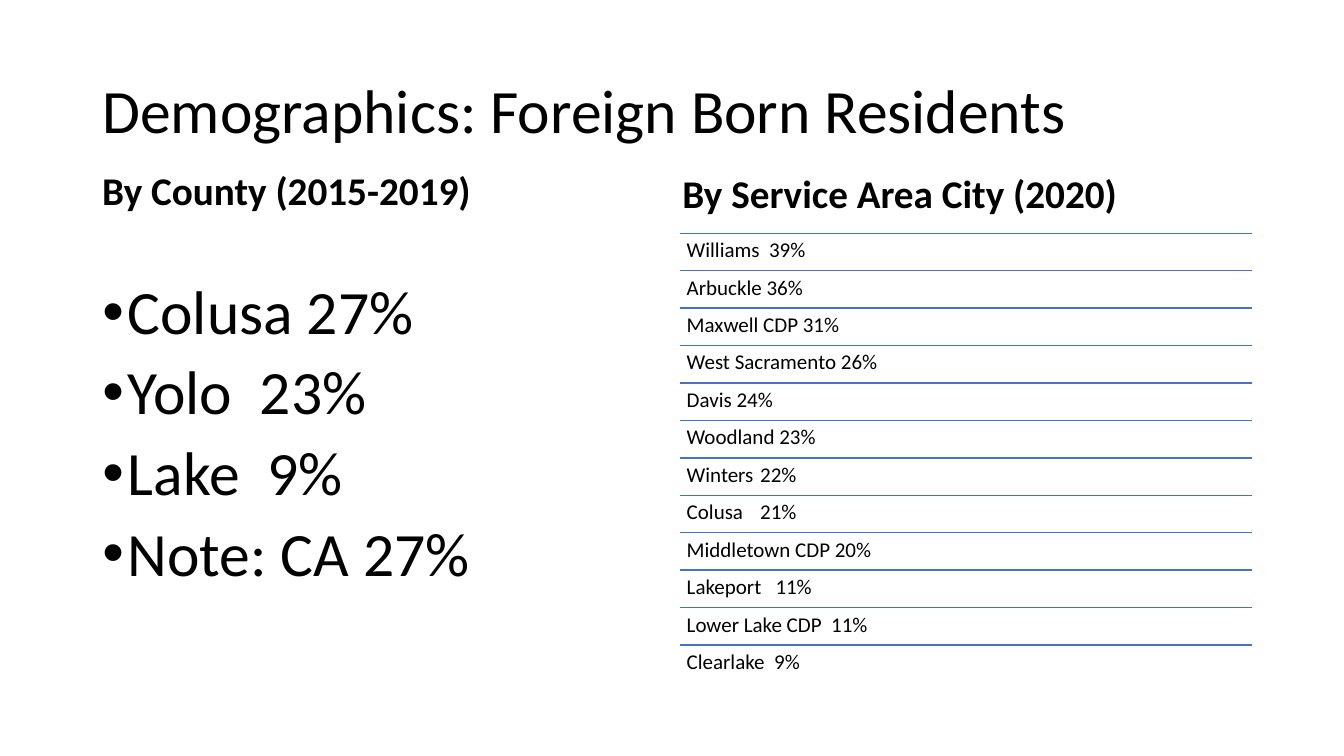
import dataclasses

import lxml.etree
import pptx
import pptx.dml.color
import pptx.enum.shapes
import pptx.enum.text
import pptx.oxml.ns
import pptx.util

Pt = pptx.util.Pt
Anchor = pptx.enum.text.MSO_ANCHOR

COUNTIES = ["Colusa 27%", "Yolo  23%", "Lake  9%", "Note: CA 27%"]
CITIES = [
    "Williams  39%", "Arbuckle 36%", "Maxwell CDP 31%", "West Sacramento 26%",
    "Davis 24%", "Woodland 23%", "Winters\t22%", "Colusa\t21%",
    "Middletown CDP 20%", "Lakeport   11%", "Lower Lake CDP  11%", "Clearlake  9%",
]


@dataclasses.dataclass
class Theme:
    font: str = "Calibri"
    text: str = "000000"
    rule: str = "4472C4"
    background: str = "FFFFFF"
    large: float = 44
    heading: float = 28
    row: float = 15


def color(value):
    return pptx.dml.color.RGBColor.from_string(value)


def add_element(parent, tag, **attributes):
    element = lxml.etree.SubElement(parent, pptx.oxml.ns.qn(tag))
    for name, value in attributes.items():
        element.set(name, str(value))


class SlideBuilder:
    def __init__(self, slide, theme):
        self.slide = slide
        self.theme = theme
        slide.background.fill.solid()
        slide.background.fill.fore_color.rgb = color(theme.background)

    def fill_paragraph(self, paragraph, text, size, bold=False, before=0):
        paragraph.alignment = pptx.enum.text.PP_ALIGN.LEFT
        paragraph.line_spacing = 0.9
        paragraph.space_before = Pt(before)
        run = paragraph.add_run()
        run.text = text
        run.font.name = self.theme.font
        run.font.size = Pt(size)
        run.font.bold = bold
        run.font.color.rgb = color(self.theme.text)

    def placeholder(self, index, box, anchor):
        shape = self.slide.placeholders[index]
        shape.left, shape.top, shape.width, shape.height = map(Pt, box)
        frame = shape.text_frame
        frame.word_wrap = True
        frame.auto_size = pptx.enum.text.MSO_AUTO_SIZE.NONE
        frame.vertical_anchor = anchor
        return frame

    def title(self, text, box):
        frame = self.placeholder(0, box, Anchor.MIDDLE)
        self.fill_paragraph(frame.paragraphs[0], text, self.theme.large)

    def heading(self, index, text, box):
        frame = self.placeholder(index, box, Anchor.BOTTOM)
        self.fill_paragraph(
            frame.paragraphs[0], text, self.theme.heading, bold=True, before=10)

    def bullets(self, index, items, box):
        frame = self.placeholder(index, box, Anchor.TOP)
        for number, item in enumerate(items):
            paragraph = frame.add_paragraph() if number else frame.paragraphs[0]
            self.fill_paragraph(paragraph, item, self.theme.large, before=10)
            properties = paragraph._p.get_or_add_pPr()
            properties.set("marL", str(Pt(18)))
            properties.set("indent", str(Pt(-18)))
            add_element(properties, "a:buFont", typeface="Arial")
            add_element(properties, "a:buChar", char="•")

    def rule(self, shapes, left, top, width):
        line = shapes.add_connector(
            pptx.enum.shapes.MSO_CONNECTOR.STRAIGHT,
            Pt(left), Pt(top), Pt(left + width), Pt(top))
        line.line.color.rgb = color(self.theme.rule)
        line.line.width = Pt(1)
        add_element(line._element.spPr, "a:effectLst")

    def row_text(self, shapes, text, box):
        frame = shapes.add_textbox(*map(Pt, box)).text_frame
        frame.word_wrap = True
        frame.margin_left = frame.margin_right = Pt(4.5)
        frame.margin_top = frame.margin_bottom = Pt(4.5)
        paragraph = frame.paragraphs[0]
        self.fill_paragraph(paragraph, text, self.theme.row)
        paragraph._p.get_or_add_pPr().set("defTabSz", str(Pt(52.5)))

    def ruled_list(self, items, left, top, width, pitch):
        shapes = self.slide.shapes.add_group_shape().shapes
        for number, item in enumerate(items):
            row_top = top + number * pitch
            self.rule(shapes, left, row_top, width)
            self.row_text(shapes, item, (left, row_top, width, pitch))


def main():
    presentation = pptx.Presentation()
    presentation.slide_width = Pt(960)
    presentation.slide_height = Pt(540)
    comparison = presentation.slide_layouts.get_by_name("Comparison")
    slide = presentation.slides.add_slide(comparison)
    builder = SlideBuilder(slide, Theme())

    # Title
    builder.title("Demographics: Foreign Born Residents", (66, 28.8, 828, 104.4))

    # Counties
    builder.heading(1, "By County (2015-2019)", (65.8, 116, 406, 40.3))
    builder.bullets(2, COUNTIES, (66, 197.3, 406, 290))

    # Cities, in place of the second list placeholder
    builder.heading(3, "By Service Area City (2020)", (480.2, 118.2, 408, 40.3))
    unused = slide.placeholders[4].element
    unused.getparent().remove(unused)
    builder.ruled_list(CITIES, left=486, top=166.6, width=408, pitch=26.74)

    presentation.save("out.pptx")


if __name__ == "__main__":
    main()
